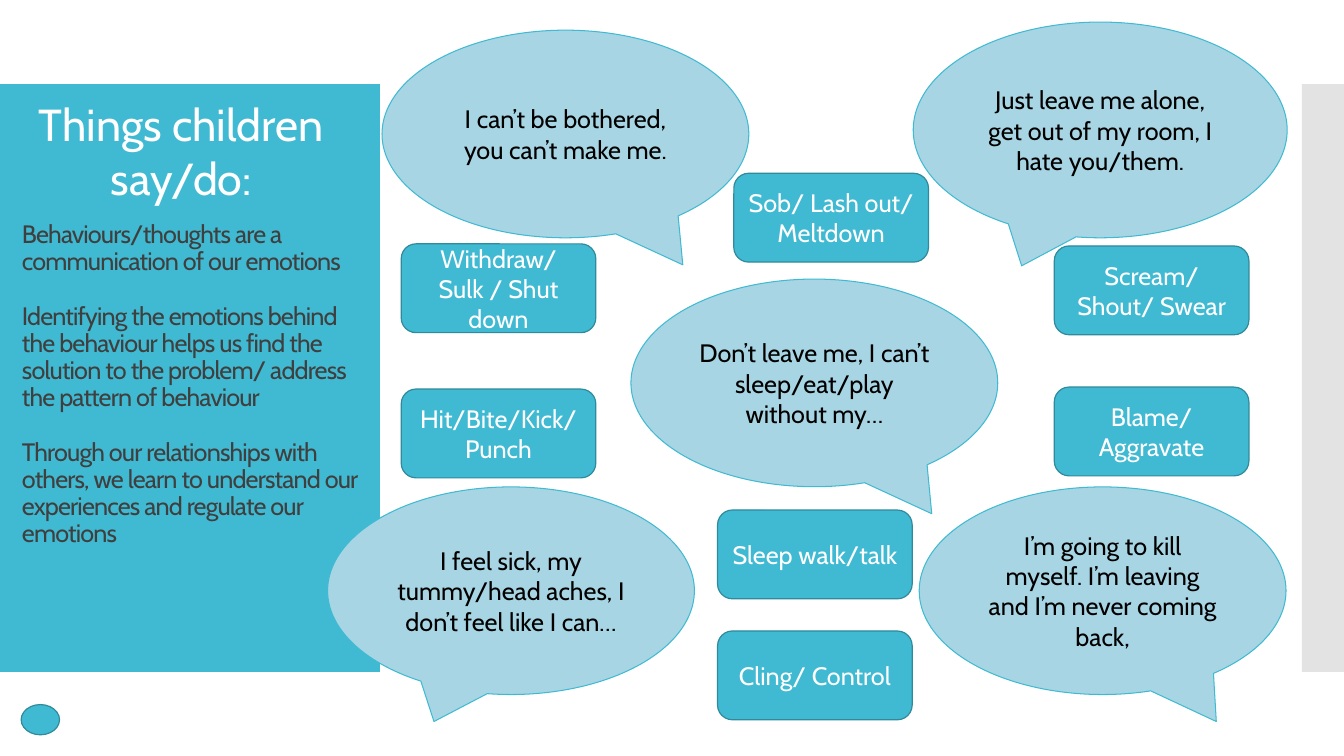
from lxml.etree import SubElement
from pptx import Presentation
from pptx.dml.color import RGBColor
from pptx.enum.shapes import MSO_SHAPE
from pptx.enum.text import MSO_ANCHOR, PP_ALIGN
from pptx.oxml.ns import qn
from pptx.util import Pt

TEAL = RGBColor(0x40, 0xBA, 0xD2)
DARK_TEAL = RGBColor(0x2F, 0x8A, 0x9B)
PALE_BLUE = RGBColor(0xA7, 0xD5, 0xE3)
GREY = RGBColor(0xC8, 0xC8, 0xC8)
CHARCOAL = RGBColor(0x3F, 0x3F, 0x3F)
WHITE = RGBColor(0xFF, 0xFF, 0xFF)
BLACK = RGBColor(0x00, 0x00, 0x00)

BUBBLE_SIZE = (262, 148.3)
LEFT_TAIL = (-0.21, 0.63)
RIGHT_TAIL = (0.32, 0.63)

BUBBLES = [
    ((652.3, 15.8), (267.1, 154.1), LEFT_TAIL,
     "Just leave me alone, get out of my room, I hate you/them."),
    ((656.6, 347.8), BUBBLE_SIZE, (0.31, 0.63),
     "I’m going to kill myself. I’m leaving and I’m never coming back,"),
    ((234, 347.8), BUBBLE_SIZE, LEFT_TAIL,
     "I feel sick, my tummy/head aches, I don’t feel like I can…"),
    ((272.9, 21.6), BUBBLE_SIZE, RIGHT_TAIL,
     "I can’t be bothered, you can’t make me."),
    ((450.7, 199.4), BUBBLE_SIZE, RIGHT_TAIL,
     "Don’t leave me, I can’t sleep/eat/play without my…"),
]

BEHAVIOURS = [
    (286.6, 174.2, "Withdraw/ Sulk / Shut down"),
    (286.6, 277.9, "Hit/Bite/Kick/\nPunch"),
    (753.1, 175.7, "Scream/Shout/ Swear"),
    (753.1, 276.5, "Blame/ Aggravate"),
    (524.2, 123.8, "Sob/ Lash out/ Meltdown"),
    (512.6, 364.3, "Sleep walk/talk"),
    (512.6, 450.7, "Cling/ Control"),
]

MESSAGES = [
    "Behaviours/thoughts are a communication of our emotions",
    "Identifying the emotions behind the behaviour helps us find the solution "
    "to the problem/ address the pattern of behaviour",
    "Through our relationships with others, we learn to understand our "
    "experiences and regulate our emotions",
]


class SlideBuilder:
    """Draws styled elements on one slide, with lengths in points."""

    font_name = "Cabin"
    text_size = 18

    def __init__(self, slide):
        self.shapes = slide.shapes

    def label(self, shape, text, color, size=text_size, align=PP_ALIGN.CENTER):
        frame = shape.text_frame
        frame.word_wrap = True
        frame.text = text
        for para in frame.paragraphs:
            para.alignment = align
            for span in para.runs:
                span.font.name = self.font_name
                span.font.size = Pt(size)
                span.font.color.rgb = color
        return frame

    def shape(self, kind, left, top, width, height, fill, line=None, weight=0.85):
        shape = self.shapes.add_shape(kind, Pt(left), Pt(top), Pt(width), Pt(height))
        shape.shadow.inherit = False
        shape.fill.solid()
        shape.fill.fore_color.rgb = fill
        if line is None:
            shape.line.fill.background()
        else:
            shape.line.color.rgb = line
            shape.line.width = Pt(weight)
        return shape

    def panel(self, left, width, fill, opacity=100):
        panel = self.shape(MSO_SHAPE.RECTANGLE, left, 60, width, 420, fill)
        if opacity < 100:
            color = panel.element.spPr.find(qn("a:solidFill"))[0]
            SubElement(color, qn("a:alpha")).set("val", str(opacity * 1000))

    def heading(self, text):
        box = self.shapes.add_textbox(Pt(-13.7), Pt(65.5), Pt(286.5), Pt(85))
        self.label(box, text, WHITE, size=32)

    def messages(self, texts):
        box = self.shapes.add_textbox(Pt(8.6), Pt(98), Pt(262), Pt(376.5))
        frame = self.label(box, "\n".join(texts), CHARCOAL, align=PP_ALIGN.LEFT)
        frame.vertical_anchor = MSO_ANCHOR.MIDDLE
        frame.margin_bottom = Pt(26)
        for index, para in enumerate(frame.paragraphs):
            para.line_spacing = 0.9
            para.space_before = Pt(19.5 if index else 0)
            for span in para.runs:
                span._r.get_or_add_rPr().set("spc", "-60")

    def bubble(self, position, size, tail, text):
        bubble = self.shape(MSO_SHAPE.OVAL_CALLOUT, *position, *size,
                            PALE_BLUE, TEAL, 0.75)
        bubble.adjustments[0], bubble.adjustments[1] = tail
        self.label(bubble, text, BLACK).vertical_anchor = MSO_ANCHOR.MIDDLE

    def behaviour(self, left, top, text):
        card = self.shape(MSO_SHAPE.ROUNDED_RECTANGLE, left, top, 139, 63.4,
                          TEAL, DARK_TEAL)
        self.label(card, text, WHITE).vertical_anchor = MSO_ANCHOR.MIDDLE

    def page_marker(self):
        self.shape(MSO_SHAPE.OVAL, 15.1, 503.3, 27.4, 21.6, TEAL, DARK_TEAL)


def main():
    deck = Presentation()
    deck.slide_width, deck.slide_height = Pt(960), Pt(540)
    page = SlideBuilder(deck.slides.add_slide(deck.slide_layouts[6]))
    page.panel(0, 271.4, TEAL)
    page.panel(930, 30, GREY, opacity=50)
    page.messages(MESSAGES)
    page.heading("Things children say/do:")
    for bubble in BUBBLES:
        page.bubble(*bubble)
    for behaviour in BEHAVIOURS:
        page.behaviour(*behaviour)
    page.page_marker()
    deck.save("out.pptx")


if __name__ == "__main__":
    main()
